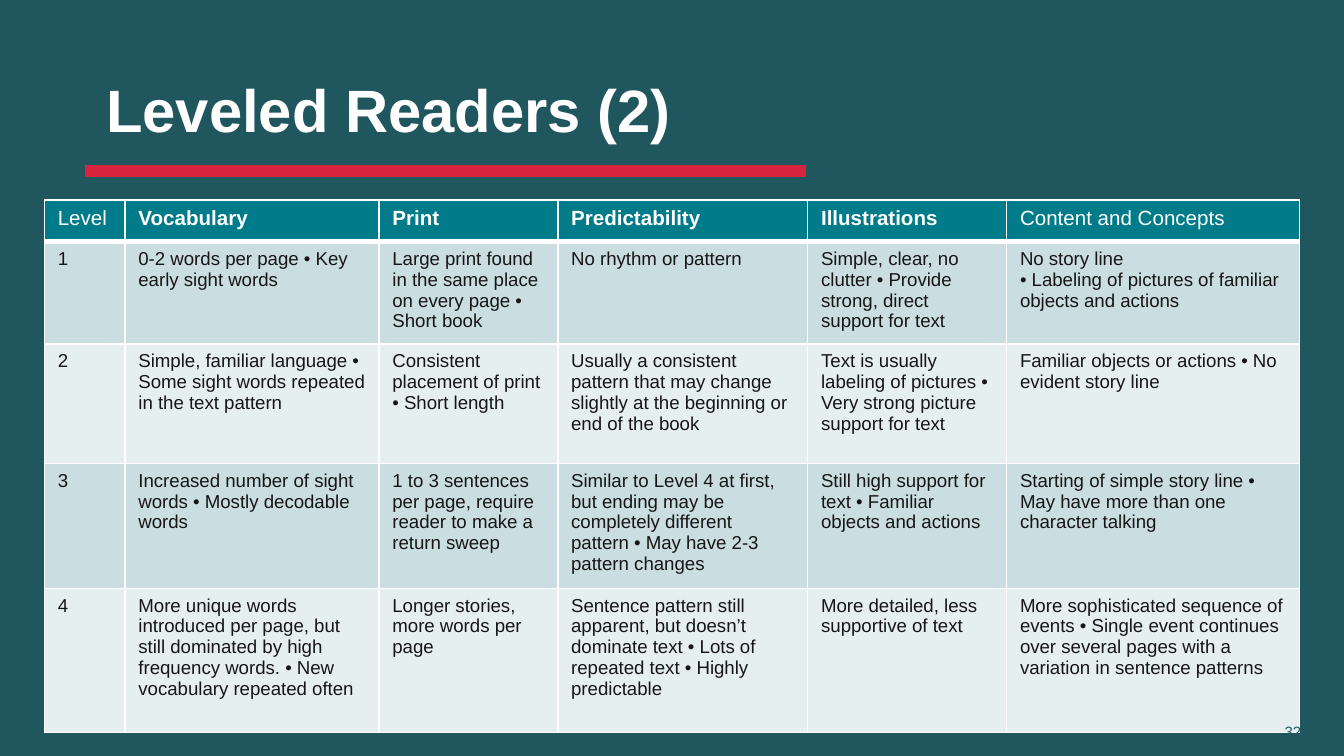
from lxml.etree import SubElement
from pptx import Presentation
from pptx.dml.color import RGBColor
from pptx.enum.shapes import MSO_CONNECTOR as Connector
from pptx.enum.text import MSO_ANCHOR as Anchor, PP_ALIGN as Align
from pptx.oxml.ns import qn
from pptx.util import Inches, Pt

# Content
TITLE = "Leveled Readers (2)"
PAGE = "32"
HEADER = ["Level", "Vocabulary", "Print", "Predictability", "Illustrations",
          "Content and Concepts"]
PLAIN_HEADERS = {"Level", "Content and Concepts"}
LEVELS = [
    ["1", "0-2 words per page • Key early sight words",
     "Large print found in the same place on every page • Short book",
     "No rhythm or pattern",
     "Simple, clear, no clutter • Provide strong, direct support for text",
     "No story line\n• Labeling of pictures of familiar objects and actions"],
    ["2", "Simple, familiar language • Some sight words repeated in the text pattern",
     "Consistent placement of print • Short length",
     "Usually a consistent pattern that may change slightly at the beginning "
     "or end of the book",
     "Text is usually labeling of pictures • Very strong picture support for text",
     "Familiar objects or actions • No evident story line"],
    ["3", "Increased number of sight words • Mostly decodable words",
     "1 to 3 sentences per page, require reader to make a return sweep",
     "Similar to Level 4 at first, but ending may be completely different "
     "pattern • May have 2-3 pattern changes",
     "Still high support for text • Familiar objects and actions",
     "Starting of simple story line • May have more than one character talking"],
    ["4", "More unique words introduced per page, but still dominated by high "
     "frequency words. • New vocabulary repeated often",
     "Longer stories, more words per page",
     "Sentence pattern still apparent, but doesn’t dominate text • Lots of "
     "repeated text • Highly predictable",
     "More detailed, less supportive of text",
     "More sophisticated sequence of events • Single event continues over "
     "several pages with a variation in sentence patterns"],
]

# Layout in inches, and colours
WIDTH = 10
HEIGHT = WIDTH * 9 / 16
TABLE_LEFT, TABLE_TOP = 0.33, 1.49
COLS = [0.6, 1.89, 1.33, 1.86, 1.48, 2.18]
ROWS = [0.31, 0.76, 0.89, 0.93, 1.07]
TEAL, RED, WHITE, INK = "20575E", "D8253D", "FFFFFF", "171616"
HEAD_FILL, BANDS = "007B89", ["CADDE1", "E6EFF0"]
EDGES = ["lnL", "lnR", "lnT", "lnB"]


def rgb(value):
    return RGBColor.from_string(value)


def box(*lengths):
    return [Inches(v) for v in lengths]


def write(tf, text, size, color, bold=False):
    tf.text = text
    tf.word_wrap = True
    for p in tf.paragraphs:
        p.alignment = Align.LEFT
        for r in p.runs:
            for name, value in {"name": "Arial", "size": Pt(size), "bold": bold}.items():
                setattr(r.font, name, value)
            r.font.color.rgb = rgb(color)


def add_borders(cell, bottom):
    """Add white cell borders; they must come before the fill in the XML."""
    tc_pr = cell._tc.get_or_add_tcPr()
    for i, edge in enumerate(EDGES):
        line = SubElement(tc_pr, qn(f"a:{edge}"),
                          w=str(Pt(bottom if edge == "lnB" else 1)))
        SubElement(SubElement(line, qn("a:solidFill")), qn("a:srgbClr"), val=WHITE)
        tc_pr.insert(i, line)


prs = Presentation()
prs.slide_width, prs.slide_height = box(WIDTH, HEIGHT)
s = prs.slides.add_slide(prs.slide_layouts[5])
s.background.fill.solid()
s.background.fill.fore_color.rgb = rgb(TEAL)

# Title and the rule below it
title = s.shapes.title
title.left, title.top, title.width, title.height = box(0.69, 0.3, 8.62, 1.09)
write(title.text_frame, TITLE, 32, WHITE, bold=True)
title.text_frame.vertical_anchor = Anchor.MIDDLE
title.text_frame.paragraphs[0].line_spacing = 0.9

rule = s.shapes.add_connector(Connector.STRAIGHT, *box(0.63, 1.27, 6, 1.27))
rule.line.color.rgb = rgb(RED)
rule.line.width = Pt(6.5)
SubElement(rule._element.spPr, qn("a:effectLst"))

# Table of reading levels
table = s.shapes.add_table(len(ROWS), len(COLS), *box(
    TABLE_LEFT, TABLE_TOP, sum(COLS), sum(ROWS))).table
for col, width in zip(table.columns, COLS):
    col.width = Inches(width)
for i, (height, texts) in enumerate(zip(ROWS, [HEADER] + LEVELS)):
    table.rows[i].height = Inches(height)
    for cell, text in zip(table.rows[i].cells, texts):
        cell.fill.solid()
        if i == 0:
            cell.fill.fore_color.rgb = rgb(HEAD_FILL)
            write(cell.text_frame, text, 11, WHITE, text not in PLAIN_HEADERS)
            add_borders(cell, bottom=3)
        else:
            cell.fill.fore_color.rgb = rgb(BANDS[(i - 1) % 2])
            write(cell.text_frame, text, 10, INK)

# Page number
number = s.shapes.add_textbox(*box(9.46, 5.33, 0.35, 0.24))
write(number.text_frame, PAGE, 8, TEAL)

prs.save("out.pptx")
